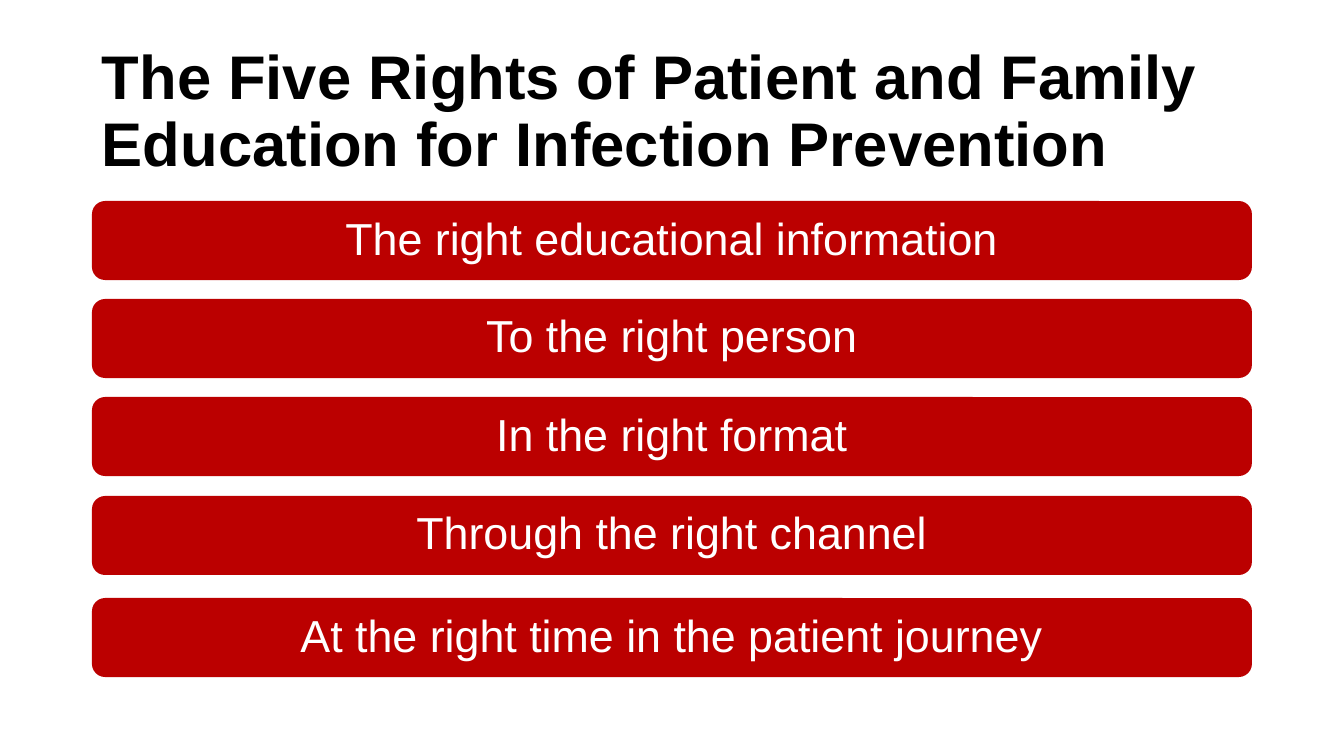
from dataclasses import dataclass

from pptx import Presentation
from pptx.dml.color import RGBColor
from pptx.enum.shapes import MSO_SHAPE
from pptx.enum.text import MSO_ANCHOR, PP_ALIGN
from pptx.shapes.autoshape import Shape
from pptx.slide import Slide
from pptx.util import Emu, Pt

SLIDE_WIDTH, SLIDE_HEIGHT = 1344, 756
LEFT, WIDTH = 92, 1160
TITLE_TOP, TITLE_HEIGHT = 40, 146
BAR_HEIGHT = 79
FONT = "Arial"
BLACK, WHITE, RED = "000000", "FFFFFF", "BB0000"


@dataclass(frozen=True)
class Right:
    text: str
    top: int


RIGHTS = [
    Right("The right educational information", 201),
    Right("To the right person", 299),
    Right("In the right format", 397),
    Right("Through the right channel", 496),
    Right("At the right time in the patient journey", 598),
]


def px(length: int) -> Emu:
    return Emu(round(length * 914400 / 100.8))


def color(value: str) -> RGBColor:
    return RGBColor.from_string(value)


def write_text(
    box: Shape,
    text: str,
    *,
    size: int,
    fill: str,
    bold: bool = False,
    align: PP_ALIGN = PP_ALIGN.LEFT,
    space_before: int = 0,
) -> None:
    frame = box.text_frame
    frame.word_wrap = True
    frame.vertical_anchor = MSO_ANCHOR.MIDDLE
    para = frame.paragraphs[0]
    para.alignment = align
    para.line_spacing = 0.9
    para.space_before = Pt(space_before)
    span = para.add_run()
    span.text = text
    span.font.name = FONT
    span.font.size = Pt(size)
    span.font.bold = bold
    span.font.color.rgb = color(fill)


def draw_title(page: Slide, text: str) -> None:
    box = page.shapes.add_textbox(px(LEFT), px(TITLE_TOP), px(WIDTH), px(TITLE_HEIGHT))
    write_text(box, text, size=44, fill=BLACK, bold=True)


def draw_right(page: Slide, right: Right) -> None:
    bar = page.shapes.add_shape(
        MSO_SHAPE.ROUNDED_RECTANGLE, px(LEFT), px(right.top), px(WIDTH), px(BAR_HEIGHT)
    )
    bar.shadow.inherit = False
    bar.fill.solid()
    bar.fill.fore_color.rgb = color(RED)
    bar.line.fill.background()
    write_text(
        bar, right.text, size=32, fill=WHITE, align=PP_ALIGN.CENTER, space_before=10
    )


def main() -> None:
    deck = Presentation()
    deck.slide_width = px(SLIDE_WIDTH)
    deck.slide_height = px(SLIDE_HEIGHT)
    page = deck.slides.add_slide(deck.slide_layouts[6])
    draw_title(
        page, "The Five Rights of Patient and Family Education for Infection Prevention"
    )
    for right in RIGHTS:
        draw_right(page, right)
    deck.save("out.pptx")


if __name__ == "__main__":
    main()
